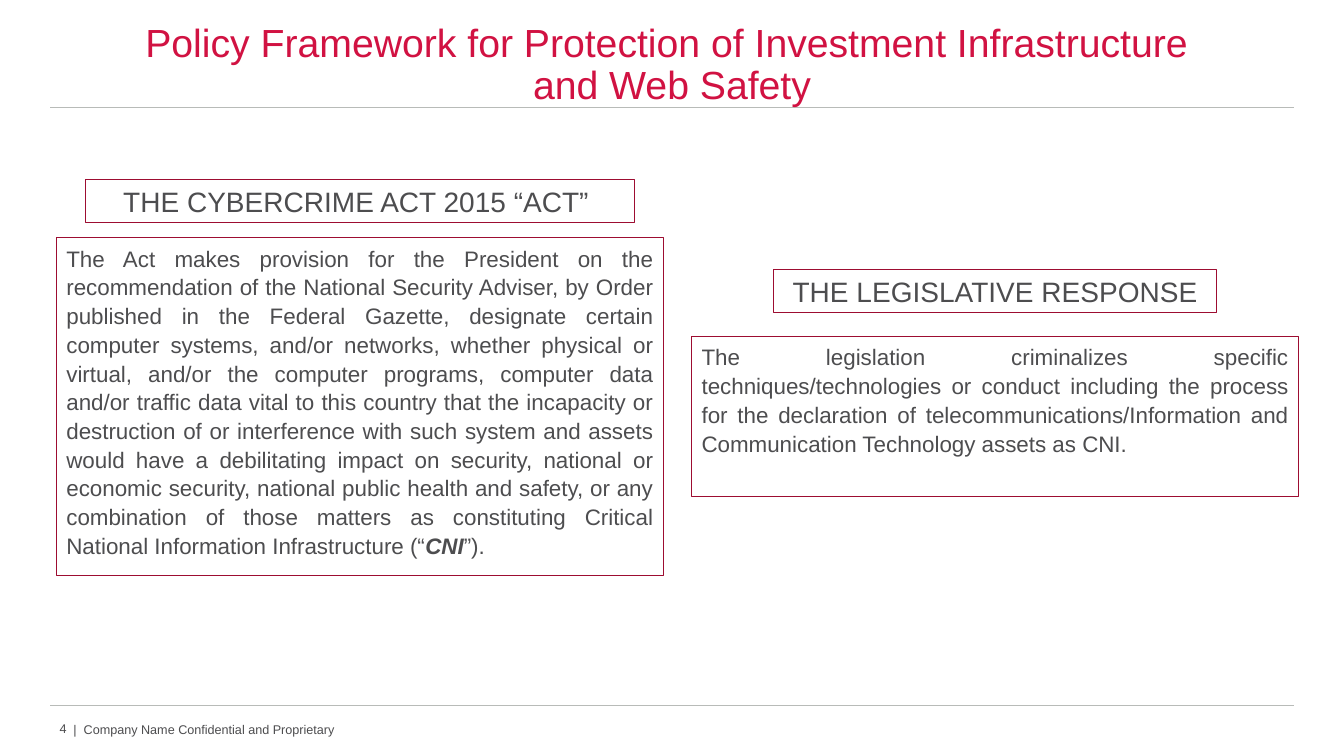
from pptx import Presentation
from pptx import util as u
from pptx.dml.color import RGBColor
from pptx.enum import shapes, text
from pptx.oxml.ns import qn
from lxml import etree

CRIMSON, MAROON, GREY, RULE_GREY = "D11242", "9D0D31", "4D4D4F", "B8BBB8"
CENTER, JUSTIFY = text.PP_ALIGN.CENTER, text.PP_ALIGN.JUSTIFY
LEFT, RIGHT = text.PP_ALIGN.LEFT, text.PP_ALIGN.RIGHT
MIDDLE, BOTTOM = text.MSO_ANCHOR.MIDDLE, text.MSO_ANCHOR.BOTTOM

ACT_TEXT = (
    "The Act makes provision for the President on the recommendation of the "
    "National Security Adviser, by Order published in the Federal Gazette, "
    "designate certain computer systems, and/or networks, whether physical or "
    "virtual, and/or the computer programs, computer data and/or traffic data "
    "vital to this country that the incapacity or destruction of or interference "
    "with such system and assets would have a debilitating impact on security, "
    "national or economic security, national public health and safety, or any "
    "combination of those matters as constituting Critical National Information "
    "Infrastructure (“"
)
RESPONSE_TEXT = (
    "The legislation criminalizes specific techniques/technologies or conduct "
    "including the process for the declaration of telecommunications/Information "
    "and Communication Technology assets as CNI."
)


def color(value):
    return RGBColor.from_string(value)


def add_rule(slide, y):
    """Thin grey line across the slide."""
    line = slide.shapes.add_connector(
        shapes.MSO_CONNECTOR.STRAIGHT,
        u.Inches(0.5), u.Inches(y), u.Inches(12.83), u.Inches(y))
    line.line.color.rgb = color(RULE_GREY)
    line.line.width = u.Pt(0.5)
    etree.SubElement(line._element.spPr, qn("a:effectLst"))


def write(shape, content, size, align, anchor=text.MSO_ANCHOR.TOP, ink=GREY):
    """Fill a shape with one paragraph and return that paragraph."""
    frame = shape.text_frame
    frame.word_wrap = True
    frame.vertical_anchor = anchor
    paragraph = frame.paragraphs[0]
    paragraph.text = content
    paragraph.alignment = align
    paragraph.font.name = "Arial"
    paragraph.font.size = u.Pt(size)
    paragraph.font.color.rgb = color(ink)
    return paragraph


def add_text(slide, box, *style):
    shape = slide.shapes.add_textbox(*map(u.Inches, box))
    return write(shape, *style)


def add_frame(slide, box, *style):
    """Outlined rectangle with text."""
    shape = slide.shapes.add_shape(
        shapes.MSO_SHAPE.RECTANGLE, *map(u.Inches, box))
    shape.shadow.inherit = False
    shape.fill.background()
    shape.line.color.rgb = color(MAROON)
    shape.line.width = u.Pt(0.75)
    return write(shape, *style)


def add_heading(slide, box, content):
    add_frame(slide, box, content, 20, CENTER).space_after = u.Pt(9)


def add_body(slide, box, content):
    paragraph = add_frame(slide, box, content, 16, JUSTIFY)
    paragraph.line_spacing = 1.07
    paragraph.space_after = u.Pt(8)
    return paragraph


def main():
    presentation = Presentation()
    presentation.slide_width = u.Inches(13.33)
    presentation.slide_height = u.Inches(7.5)
    slide = presentation.slides.add_slide(presentation.slide_layouts[6])

    # Rules and footer
    for y in (7, 1.07):
        add_rule(slide, y)
    add_text(slide, (0.63, 7.11, 3.57, 0.25),
             "|  Company Name Confidential and Proprietary", 9, LEFT, MIDDLE)
    add_text(slide, (0.36, 7.13, 0.4, 0.2), "4", 9, RIGHT, MIDDLE)

    # Title
    title = add_text(
        slide, (0.45, 0.4, 12.43, 0.72),
        "Policy Framework for Protection of Investment Infrastructure \nand Web Safety",
        28, CENTER, BOTTOM, CRIMSON)
    title.line_spacing = 0.9

    # The Act
    add_heading(slide, (0.85, 1.78, 5.44, 0.43), "THE CYBERCRIME ACT 2015 “ACT” ")
    act = add_body(slide, (0.56, 2.36, 6.02, 3.35), ACT_TEXT)
    term = act.add_run()
    term.text = "CNI"
    term.font.bold = term.font.italic = True
    act.add_run().text = "”)."

    # The response
    add_heading(slide, (7.67, 2.67, 4.4, 0.43), "THE LEGISLATIVE RESPONSE")
    add_body(slide, (6.86, 3.34, 6.02, 1.59), RESPONSE_TEXT)

    presentation.save("out.pptx")


if __name__ == "__main__":
    main()
